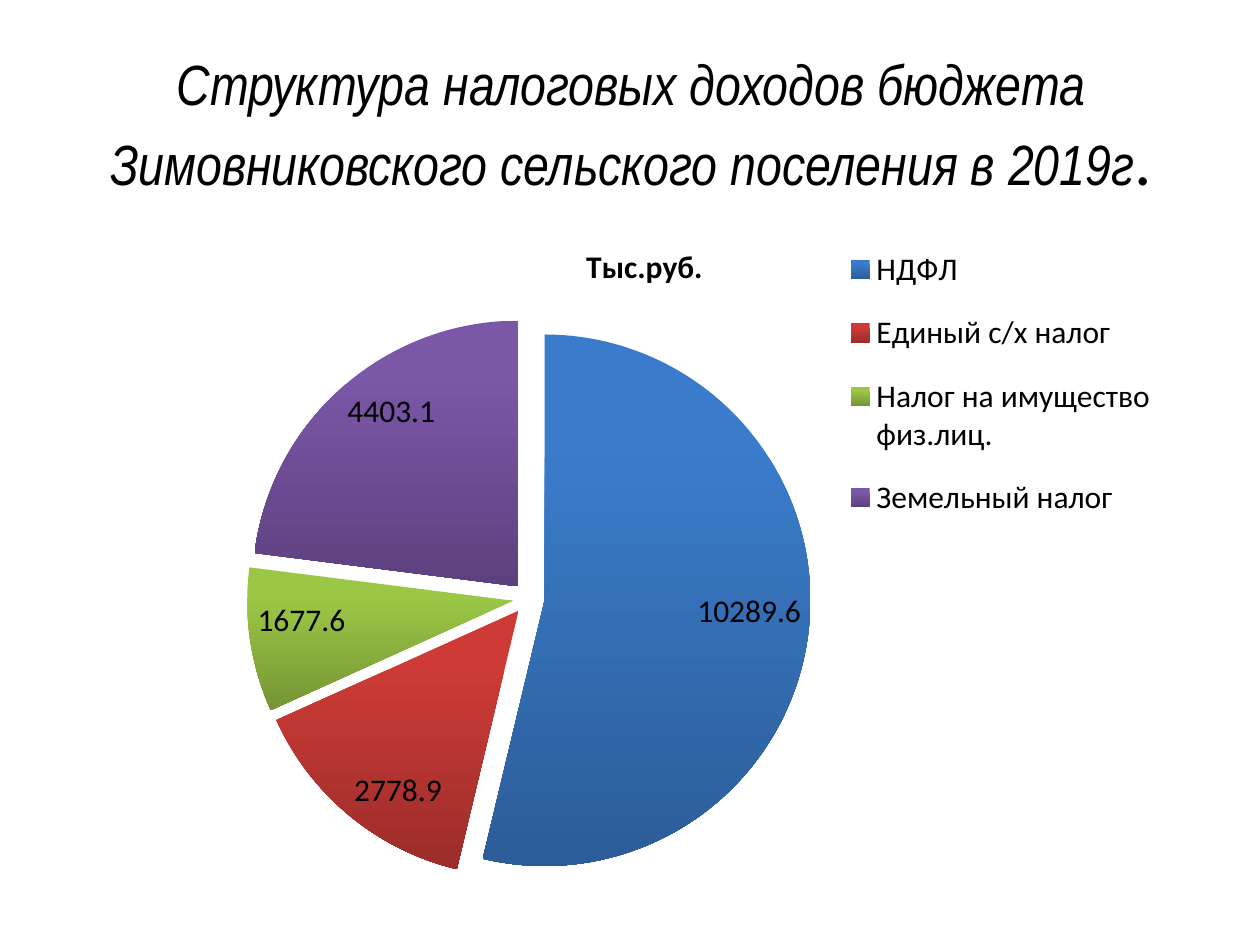
from lxml import etree
from pptx import Presentation
from pptx.chart.data import CategoryChartData
from pptx.dml.color import RGBColor
from pptx.enum import chart as ch, text
from pptx.oxml.ns import qn
from pptx.util import Pt

COLORS = {"text": "000000", "background": "FFFFFF"}
TAXES = {
    "НДФЛ": (10289.6, "3A7CCB", "2C5D98"),
    "Единый с/х налог": (2778.9, "CE3B37", "9B2D2A"),
    "Налог на имущество физ.лиц.": (1677.6, "9CC746", "769535"),
    "Земельный налог": (4403.1, "7B57A8", "5D417E"),
}


def format_font(font, size, name="Calibri", bold=False, italic=False):
    font.size, font.name = Pt(size), name
    font.bold, font.italic = bold, italic
    font.color.rgb = RGBColor.from_string(COLORS["text"])


def add_text(p, content, **style):
    r = p.add_run()
    r.text = content
    format_font(r.font, **style)


def set_layout(parent, after, **place):
    for old in parent.findall(qn("c:layout")):
        parent.remove(old)
    layout = etree.Element(qn("c:layout"))
    manual = etree.SubElement(layout, qn("c:manualLayout"))
    if "w" in place and after is None:
        etree.SubElement(manual, qn("c:layoutTarget")).set("val", "inner")
    for mode in ("xMode", "yMode"):
        etree.SubElement(manual, qn(f"c:{mode}")).set("val", "edge")
    for key, value in place.items():
        etree.SubElement(manual, qn(f"c:{key}")).set("val", str(value))
    if after is None:
        parent.insert(0, layout)
    else:
        parent.find(qn(after)).addnext(layout)


def place_title(slide, left, top, width, height):
    sp = slide.shapes.title
    sp.left, sp.top, sp.width, sp.height = map(Pt, (left, top, width, height))
    tf = sp.text_frame
    tf.word_wrap = True
    tf.vertical_anchor = text.MSO_ANCHOR.MIDDLE
    p = tf.paragraphs[0]
    p.alignment = text.PP_ALIGN.CENTER
    add_text(p, "Структура налоговых доходов бюджета "
             "Зимовниковского сельского поселения в 2019г",
             size=32.4, name="Arial Narrow", italic=True)
    add_text(p, ".", size=39.6)


def color_slices(series):
    for i, (_, top_color, bottom_color) in enumerate(TAXES.values()):
        fill = series.points[i].format.fill
        fill.gradient()
        fill.gradient_angle = 270
        first, last = fill.gradient_stops
        first.position, last.position = 0.2, 1
        first.color.rgb = RGBColor.from_string(top_color)
        last.color.rgb = RGBColor.from_string(bottom_color)
    explosion = etree.Element(qn("c:explosion"))
    explosion.set("val", "6")
    series._element.find(qn("c:dPt")).addprevious(explosion)


def place_chart(slide, left, top, width, height):
    data = CategoryChartData()
    data.categories = list(TAXES)
    data.add_series("Тыс.руб.", [tax[0] for tax in TAXES.values()])
    chart = slide.shapes.add_chart(
        ch.XL_CHART_TYPE.PIE, *map(Pt, (left, top, width, height)), data).chart
    format_font(chart.font, size=18)

    chart.has_title = True
    add_text(chart.chart_title.text_frame.paragraphs[0], "Тыс.руб.",
             size=18, bold=True)
    set_layout(chart.chart_title._element, "c:tx", x=0.44, y=0.05)

    chart.has_legend = True
    chart.legend.position = ch.XL_LEGEND_POSITION.RIGHT
    chart.legend.include_in_layout = False
    format_font(chart.legend.font, size=18)
    set_layout(chart.legend._element, "c:legendPos",
               x=0.66, y=0.03, w=0.29, h=0.45)

    plot = chart.plots[0]
    plot.vary_by_categories = True
    plot.has_data_labels = True
    labels = plot.data_labels
    labels.show_value, labels.show_percentage = True, False
    labels.position = ch.XL_LABEL_POSITION.INSIDE_END
    format_font(labels.font, size=18)
    color_slices(plot.series[0])
    set_layout(plot._element.getparent(), None, x=0.15, y=0.16, w=0.49, h=0.8)


def main():
    prs = Presentation()
    prs.slide_width, prs.slide_height = Pt(720), Pt(540)
    s = prs.slides.add_slide(prs.slide_layouts[5])
    s.background.fill.solid()
    s.background.fill.fore_color.rgb = RGBColor.from_string(COLORS["background"])
    place_title(s, 36.7, 26, 648, 90)
    place_chart(s, 42.5, 116.6, 657.4, 402.5)
    prs.save("out.pptx")


if __name__ == "__main__":
    main()
